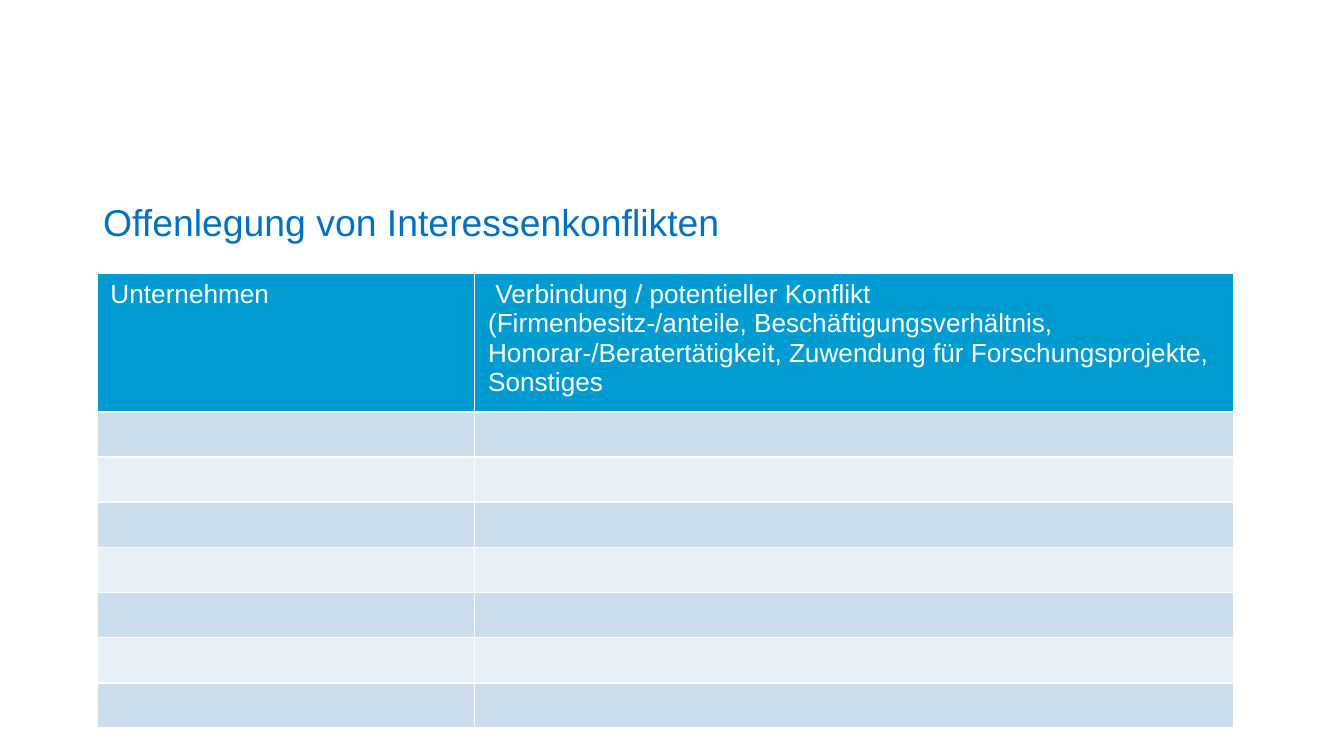
from lxml.etree import SubElement
from pptx import Presentation
from pptx.dml.color import RGBColor
from pptx.enum.text import MSO_ANCHOR
from pptx.oxml.ns import qn
from pptx.util import Pt

WHITE = RGBColor(0xFF, 0xFF, 0xFF)
TITLE_BLUE = RGBColor(0x00, 0x70, 0xC0)
HEADER_BLUE = RGBColor(0x00, 0x9B, 0xD0)
BANDS = [RGBColor(0xCC, 0xDE, 0xEE), RGBColor(0xE7, 0xEF, 0xF7)]

HEADERS = [
    ["Unternehmen"],
    [
        " Verbindung / potentieller Konflikt",
        "(Firmenbesitz-/anteile, Beschäftigungsverhältnis, "
        "Honorar-/Beratertätigkeit, Zuwendung für Forschungsprojekte, Sonstiges",
    ],
]
COLUMN_WIDTHS = [202.3, 406.5]
HEADER_HEIGHT = 60.5
ROW_HEIGHT = 24.2
EMPTY_ROWS = 7


class SlideBuilder:
    """Holds the text style and the current slide, and adds elements to it."""

    font_name = "Arial"
    title_size = 20
    table_size = 14
    border_width = 1

    def __init__(self, slide):
        self.s = slide

    def style(self, p, size, color):
        p.font.name = self.font_name
        p.font.size = Pt(size)
        p.font.color.rgb = color

    def title(self, text, left, top, width, height):
        sp = self.s.shapes.add_textbox(Pt(left), Pt(top), Pt(width), Pt(height))
        tf = sp.text_frame
        tf.word_wrap = True
        tf.vertical_anchor = MSO_ANCHOR.BOTTOM
        p = tf.paragraphs[0]
        p.text = text
        p.line_spacing = 0.9
        self.style(p, self.title_size, TITLE_BLUE)

    def cell(self, cell, fill, lines=()):
        tcPr = cell._tc.get_or_add_tcPr()
        for side in ("a:lnL", "a:lnR", "a:lnT", "a:lnB"):
            ln = SubElement(tcPr, qn(side), w=str(Pt(self.border_width)))
            solid = SubElement(ln, qn("a:solidFill"))
            SubElement(solid, qn("a:srgbClr"), val=str(WHITE))
        cell.fill.solid()
        cell.fill.fore_color.rgb = fill
        tf = cell.text_frame
        tf.text = "\n".join(lines)
        for p in tf.paragraphs:
            self.style(p, self.table_size, WHITE)
            if not lines:
                end = SubElement(p._p, qn("a:endParaRPr"))
                end.set("sz", str(self.table_size * 100))

    def table(self, left, top, headers, widths, empty_rows):
        height = HEADER_HEIGHT + empty_rows * ROW_HEIGHT
        table = self.s.shapes.add_table(
            empty_rows + 1, len(widths), Pt(left), Pt(top), Pt(sum(widths)), Pt(height)
        ).table
        for column, width in zip(table.columns, widths):
            column.width = Pt(width)
        for i, row in enumerate(table.rows):
            row.height = Pt(ROW_HEIGHT if i else HEADER_HEIGHT)
            for cell, lines in zip(row.cells, headers):
                if i:
                    self.cell(cell, BANDS[(i - 1) % 2])
                else:
                    self.cell(cell, HEADER_BLUE, lines)


def main():
    prs = Presentation()
    prs.slide_width, prs.slide_height = Pt(720), Pt(405)
    builder = SlideBuilder(prs.slides.add_slide(prs.slide_layouts[6]))
    builder.title("Offenlegung von Interessenkonflikten", 48.2, 89.3, 521.3, 45.4)
    builder.table(52, 146.2, HEADERS, COLUMN_WIDTHS, EMPTY_ROWS)
    prs.save("out.pptx")


if __name__ == "__main__":
    main()
